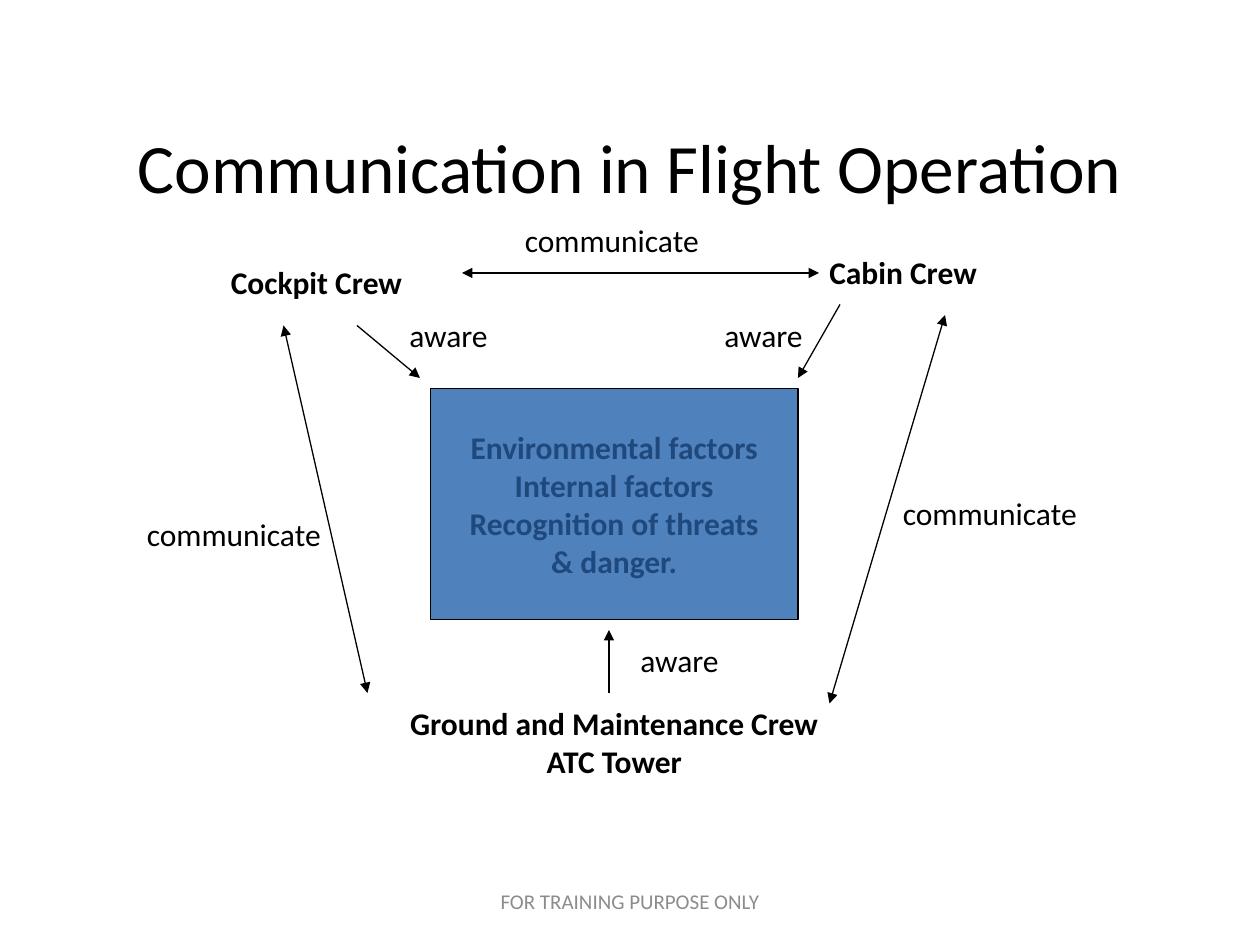
import pptx
import pptx.dml.color
import pptx.enum.shapes
import pptx.enum.text
import pptx.oxml.ns
import pptx.util
from lxml import etree

COLUMNS, ROWS = 120, 90
ANCHOR = pptx.enum.text.MSO_ANCHOR
ALIGN = pptx.enum.text.PP_ALIGN
AUTO_SIZE = pptx.enum.text.MSO_AUTO_SIZE


def color(hex_value):
    return pptx.dml.color.RGBColor.from_string(hex_value)


class Diagram:
    """Holds the style and the current slide; lengths are grid columns and rows."""

    ink = "000000"
    box_fill = "4F81BD"
    box_ink = "1F497D"
    footer_ink = "8C8C8C"
    font_name = "Calibri"
    line_width = pptx.util.Pt(0.75)

    def __init__(self, presentation):
        self.slide = presentation.slides.add_slide(presentation.slide_layouts[6])
        self.column = presentation.slide_width / COLUMNS
        self.row = presentation.slide_height / ROWS

    def place(self, *lengths):
        """Turn alternating columns and rows into slide lengths."""
        units = (self.column, self.row)
        return [round(length * units[i % 2]) for i, length in enumerate(lengths)]

    def set_text(self, shape, lines, frame_format, align=ALIGN.LEFT, size=18, ink=ink, bold=False):
        frame = shape.text_frame
        for name, value in frame_format.items():
            setattr(frame, name, value)
        font_format = {"name": self.font_name, "size": pptx.util.Pt(size), "bold": bold}
        for i, line in enumerate(lines):
            paragraph = frame.add_paragraph() if i else frame.paragraphs[0]
            paragraph.text = line
            paragraph.alignment = align
            for name, value in font_format.items():
                setattr(paragraph.font, name, value)
            paragraph.font.color.rgb = color(ink)

    def label(self, left, top, width, *lines, height=4.8, wrap=False, **style):
        """Text whose box grows with its content."""
        box = self.slide.shapes.add_textbox(*self.place(left, top, width, height))
        frame_format = {"word_wrap": wrap, "auto_size": AUTO_SIZE.SHAPE_TO_FIT_TEXT}
        self.set_text(box, lines, frame_format, **style)

    def banner(self, left, top, width, height, line, **style):
        """Centred text in a box of fixed size."""
        box = self.slide.shapes.add_textbox(*self.place(left, top, width, height))
        frame_format = {"word_wrap": True, "vertical_anchor": ANCHOR.MIDDLE}
        self.set_text(box, [line], frame_format, align=ALIGN.CENTER, **style)

    def box(self, left, top, width, height, *lines):
        rectangle = self.slide.shapes.add_shape(
            pptx.enum.shapes.MSO_SHAPE.RECTANGLE, *self.place(left, top, width, height))
        rectangle.shadow.inherit = False
        rectangle.fill.solid()
        rectangle.fill.fore_color.rgb = color(self.box_fill)
        rectangle.line.color.rgb = color(self.ink)
        rectangle.line.width = self.line_width
        frame_format = {"word_wrap": False, "vertical_anchor": ANCHOR.MIDDLE}
        self.set_text(rectangle, lines, frame_format, align=ALIGN.CENTER,
                      ink=self.box_ink, bold=True)

    def arrow(self, start, end, two_way=False):
        connector = self.slide.shapes.add_connector(
            pptx.enum.shapes.MSO_CONNECTOR.STRAIGHT, *self.place(*start, *end))
        connector.line.color.rgb = color(self.ink)
        connector.line.width = self.line_width
        outline = connector.line._get_or_add_ln()
        for tag in ("a:headEnd", "a:tailEnd") if two_way else ("a:tailEnd",):
            etree.SubElement(outline, pptx.oxml.ns.qn(tag), type="triangle")
        etree.SubElement(connector._element.spPr, pptx.oxml.ns.qn("a:effectLst"))


def main():
    presentation = pptx.Presentation()
    presentation.slide_width = pptx.util.Inches(10)
    presentation.slide_height = pptx.util.Inches(7.5)
    diagram = Diagram(presentation)

    # Title
    diagram.banner(10.8, 8.25, 98.4, 15, "Communication in Flight Operation", size=39.6)

    # Shared situation in the centre
    diagram.box(41, 37, 35, 22, "Environmental factors", "Internal factors",
                "Recognition of threats", "& danger.")

    # Crews around it
    diagram.label(20.8, 24.5, 21.6, "Cockpit Crew", bold=True)
    diagram.label(77.8, 23.5, 19, "Cabin Crew", bold=True)
    diagram.label(34, 66.5, 49, "Ground and Maintenance Crew", "ATC Tower",
                  height=8.4, wrap=True, align=ALIGN.CENTER, bold=True)

    # Crews communicate with each other
    for start, end in (((27, 31), (35, 66)), ((44, 26), (78, 26)), ((90, 30), (79, 67))):
        diagram.arrow(start, end, two_way=True)

    # Each crew is aware of the situation
    for start, end in (((80, 29), (76, 36)), ((34, 31), (40, 36)), ((58, 66), (58, 60))):
        diagram.arrow(start, end)

    # Arrow labels
    arrow_labels = {
        "communicate": (20.3, [(84.8, 46.5), (12.8, 48.5), (48.8, 20.5)]),
        "aware": (10, [(37.8, 29.5), (67.8, 29.5), (59.8, 60.5)]),
    }
    for word, (width, spots) in arrow_labels.items():
        for left, top in spots:
            diagram.label(left, top, width, word)

    # Footer
    diagram.banner(41, 83.4, 38, 4.8, "FOR TRAINING PURPOSE ONLY",
                   size=12, ink=diagram.footer_ink)

    presentation.save("out.pptx")


if __name__ == "__main__":
    main()
